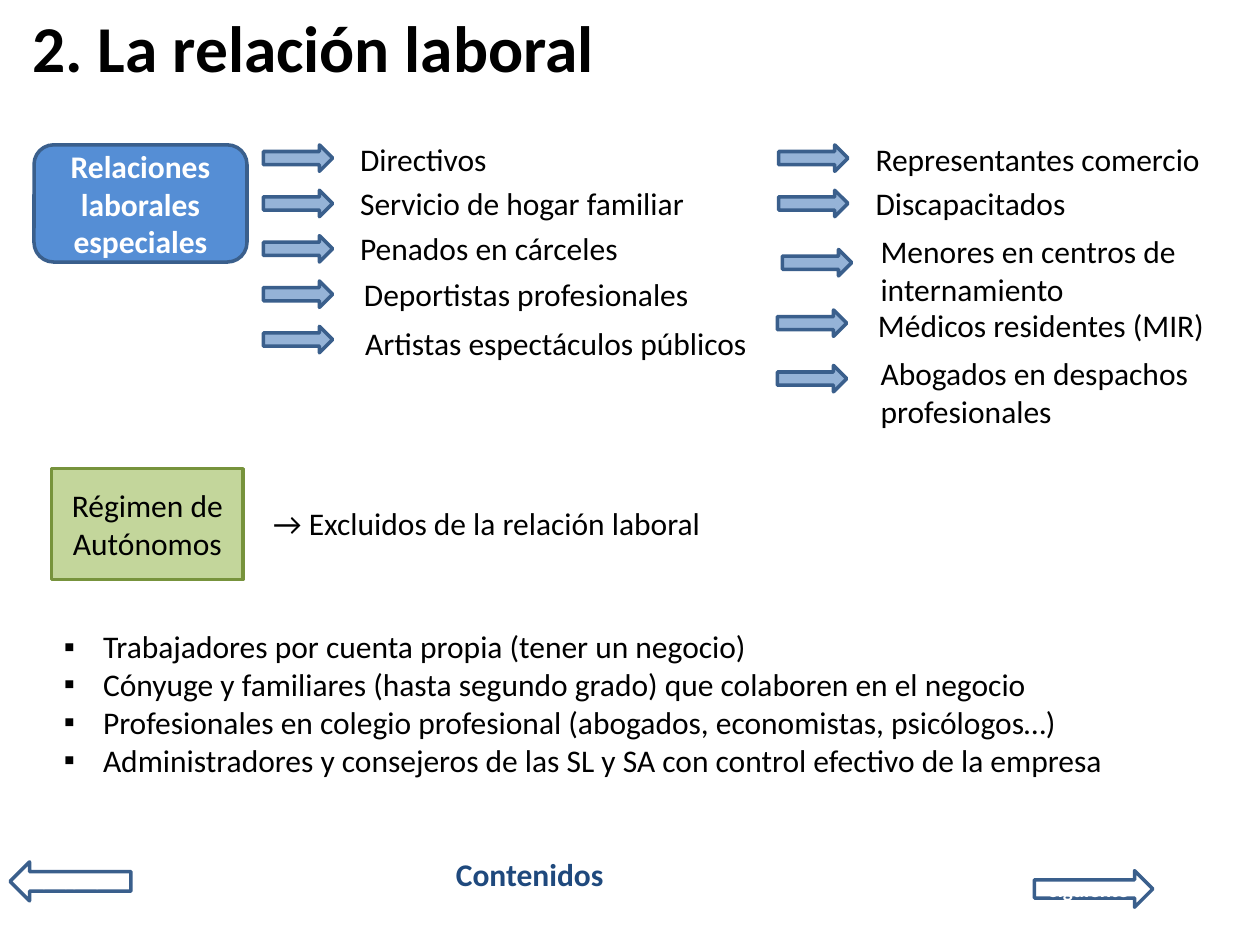
"""Builds a slide on special employment relationships and the self-employed regime."""
from dataclasses import dataclass

from lxml import etree
from pptx import Presentation
from pptx import util as u
from pptx.dml.color import RGBColor
from pptx.enum import shapes, text
from pptx.oxml import ns


@dataclass(frozen=True)
class Theme:
    font: str = "Calibri"
    ink: str = "000000"
    white: str = "FFFFFF"
    navy: str = "1F497D"
    blue: str = "558ED5"
    pale_blue: str = "95B3D7"
    blue_line: str = "3A5F8C"
    green: str = "C3D69B"
    green_line: str = "77933C"
    title: float = 37.4
    body: float = 18
    small: float = 12
    line: float = 2


class Deck:
    def __init__(self, theme):
        self.theme = theme
        self.prs = Presentation()
        self.prs.slide_width, self.prs.slide_height = u.Inches(10), u.Inches(7.5)
        self.s = self.prs.slides.add_slide(self.prs.slide_layouts[6])

    def run(self, p, words, size=None, color=None, bold=False):
        r = p.add_run()
        r.text = words
        r.font.name = self.theme.font
        r.font.size = u.Pt(size or self.theme.body)
        r.font.bold = bold
        r.font.color.rgb = RGBColor.from_string(color or self.theme.ink)

    def shape(self, kind, box, fill=None, line=None, words=None, **style):
        sp = self.s.shapes.add_shape(kind, *map(u.Inches, box))
        sp.shadow.inherit = False
        if fill:
            sp.fill.solid()
            sp.fill.fore_color.rgb = RGBColor.from_string(fill)
        else:
            sp.fill.background()
        sp.line.color.rgb = RGBColor.from_string(line or self.theme.blue_line)
        sp.line.width = u.Pt(self.theme.line)
        if words:
            tf = sp.text_frame
            tf.word_wrap = True
            tf.vertical_anchor = text.MSO_ANCHOR.MIDDLE
            p = tf.paragraphs[0]
            p.alignment = text.PP_ALIGN.CENTER
            self.run(p, words, **style)

    def arrow(self, x, y):
        self.shape(shapes.MSO_SHAPE.RIGHT_ARROW, (x, y, 0.55, 0.21), self.theme.pale_blue)

    def frame(self, box):
        tf = self.s.shapes.add_textbox(*map(u.Inches, box)).text_frame
        tf.word_wrap = True
        return tf

    def label(self, box, words, **style):
        tf = self.frame(box)
        tf.auto_size = text.MSO_AUTO_SIZE.SHAPE_TO_FIT_TEXT
        self.run(tf.paragraphs[0], words, **style)

    def heading(self, box, words):
        tf = self.frame(box)
        tf.vertical_anchor = text.MSO_ANCHOR.MIDDLE
        self.run(tf.paragraphs[0], words, self.theme.title, bold=True)

    def bullets(self, box, items, indent=0.31):
        tf = self.frame(box)
        tf.auto_size = text.MSO_AUTO_SIZE.SHAPE_TO_FIT_TEXT
        for i, item in enumerate(items):
            p = tf.add_paragraph() if i else tf.paragraphs[0]
            pPr = p._p.get_or_add_pPr()
            pPr.set("marL", str(u.Inches(indent)))
            pPr.set("indent", str(-u.Inches(indent)))
            etree.SubElement(pPr, ns.qn("a:buFont")).set("typeface", "Arial")
            etree.SubElement(pPr, ns.qn("a:buChar")).set("char", "▪")
            self.run(p, item)


def main():
    t = Theme()
    d = Deck(t)
    kind = shapes.MSO_SHAPE

    d.heading((0.16, 0.05, 9, 0.63), "2. La relación laboral")
    d.shape(kind.ROUNDED_RECTANGLE, (0.27, 1.15, 1.69, 0.93), t.blue,
            words="Relaciones laborales especiales", color=t.white, bold=True)

    left_labels = [
        (2.76, 1.06, "Directivos"),
        (2.76, 1.41, "Servicio de hogar familiar"),
        (2.76, 1.77, "Penados en cárceles"),
        (2.79, 2.13, "Deportistas profesionales"),
        (2.8, 2.52, "Artistas espectáculos públicos"),
    ]
    for i, (x, y, words) in enumerate(left_labels):
        d.arrow(2.09, 1.15 + 0.36 * i)
        d.label((x, y, 3.37, 0.4), words)

    right_labels = [
        (6.18, 1.15, (6.85, 1.06, 2.78, 0.4), "Representantes comercio"),
        (6.18, 1.51, (6.85, 1.41, 3.09, 0.4), "Discapacitados"),
        (6.21, 1.98, (6.89, 1.79, 3.09, 0.71), "Menores en centros de internamiento"),
        (6.17, 2.46, (6.87, 2.38, 3.07, 0.4), "Médicos residentes (MIR)"),
        (6.17, 2.9, (6.89, 2.76, 2.75, 0.71), "Abogados en despachos profesionales"),
    ]
    for x, y, box, words in right_labels:
        d.arrow(x, y)
        d.label(box, words)

    d.shape(kind.RECTANGLE, (0.41, 3.72, 1.52, 0.88), t.green, t.green_line,
            "Régimen de Autónomos")
    d.label((2.07, 3.95, 4.38, 0.4), "→ Excluidos de la relación laboral")
    d.bullets((0.41, 4.93, 8.53, 1.31), [
        "Trabajadores por cuenta propia (tener un negocio)",
        "Cónyuge y familiares (hasta segundo grado) que colaboren en el negocio",
        "Profesionales en colegio profesional (abogados, economistas, psicólogos…)",
        "Administradores y consejeros de las SL y SA con control efectivo de la empresa",
    ])

    d.label((3.52, 6.74, 1.44, 0.4), "Contenidos", color=t.navy, bold=True)
    for arrow, box, words in [
        (kind.LEFT_ARROW, (0.08, 6.84, 0.96, 0.31), "anterior"),
        (kind.RIGHT_ARROW, (8.21, 6.91, 0.94, 0.29), "siguiente"),
    ]:
        d.shape(arrow, box, words=words, size=t.small, color=t.white, bold=True)

    d.prs.save("out.pptx")


if __name__ == "__main__":
    main()
